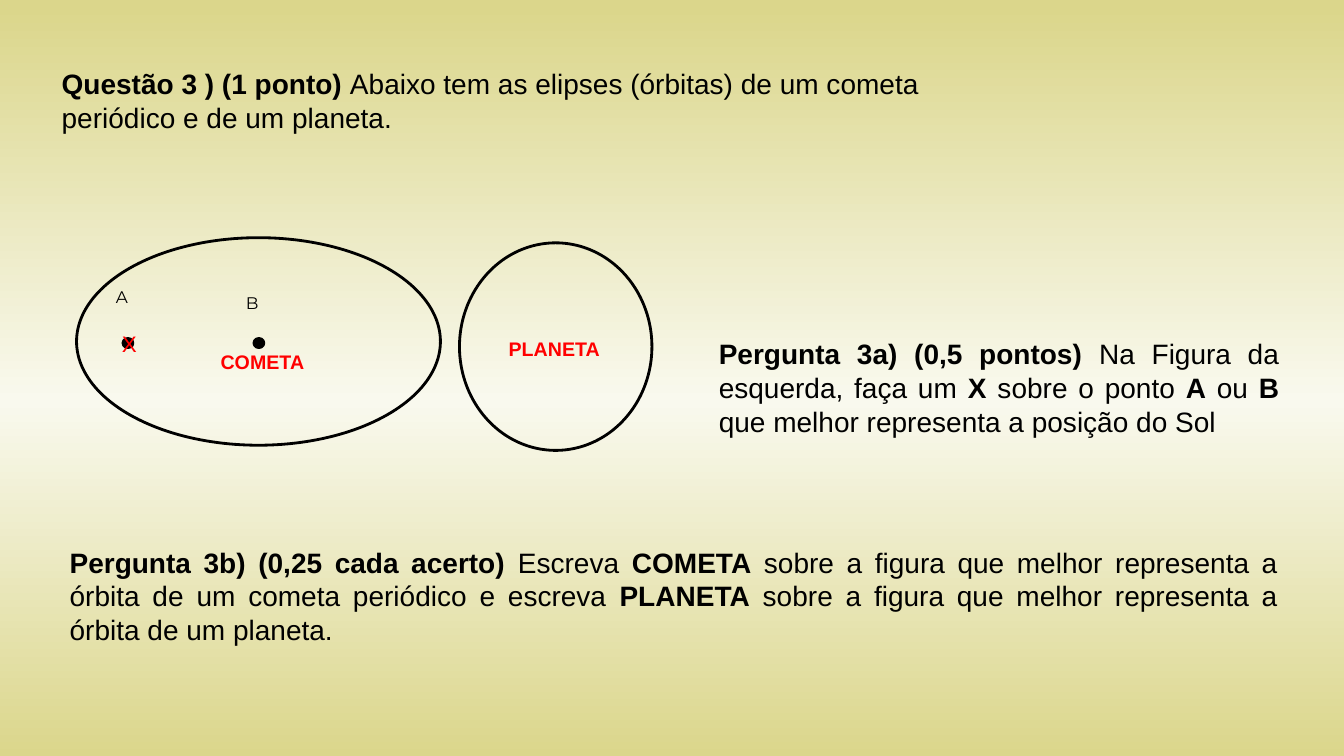
from copy import deepcopy

from pptx import Presentation
from pptx.dml.color import RGBColor
from pptx.enum.shapes import MSO_SHAPE as Preset
from pptx.enum.text import MSO_ANCHOR as Anchor, MSO_AUTO_SIZE as AutoSize, PP_ALIGN as Align
from pptx.oxml.ns import qn
from pptx.util import Cm, Pt

# Content: places are left, top, width, height in cm; ** switches bold on and off
BLACK, RED = "000000", "FF0000"
BACKGROUND_STOPS = [(0.01, "DBD68B"), (0.53, "F9F9EE"), (1, "DBD68B")]
QUESTIONS = [
    ("**Questão 3 ) (1 ponto) **Abaixo tem as elipses (órbitas) de um cometa "
     "periódico e de um planeta.", (1.3, 1.55, 22.2, 1.96), Align.LEFT),
    ("**Pergunta 3a) (0,5 pontos)** Na Figura da esquerda, faça um **X** sobre o ponto "
     "**A** ou **B** que melhor representa a posição do Sol",
     (17.86, 8.36, 14.63, 2.82), Align.JUSTIFY),
    ("**Pergunta 3b) (0,25 cada acerto) **Escreva **COMETA** sobre a figura que melhor "
     "representa a órbita de um cometa periódico e escreva **PLANETA** sobre a figura "
     "que melhor representa a órbita de um planeta.",
     (1.5, 13.61, 30.96, 2.82), Align.JUSTIFY),
]
ORBITS = [(11.58, 6.12, 4.85, 5.23), (1.93, 5.99, 9.17, 5.23)]
POINTS = [(3.1, 8.53, 0.25, 0.23), (6.4, 8.53, 0.25, 0.23)]
LETTERS = [("A", (2.54, 7.11, 1.07, 1.45)), ("B", (5.82, 7.24, 1.07, 1.45))]
ANSWERS = [
    ("X", (2.82, 8.2, 0.89, 1.55), {"size": Pt(16), "bold": False}),
    ("COMETA", (5.31, 8.69, 2.67, 1.63), {"size": Pt(14), "bold": True}),
    ("PLANETA", (12.57, 8.36, 2.87, 1.63), {"size": Pt(14), "bold": True}),
]
QUESTION_FONT = {"name": "Arial", "size": Pt(20)}
LETTER_FONT = {"name": "Montserrat", "size": Pt(12)}


def color(hex_text):
    return RGBColor.from_string(hex_text)


def lengths(place):
    return [Cm(value) for value in place]


def apply(target, formats):
    for name, value in formats.items():
        setattr(target, name, value)


def write(paragraph, text, font_color, formats):
    for index, part in enumerate(text.split("**")):
        if part:
            run = paragraph.add_run()
            run.text = part
            apply(run.font, {"bold": index % 2 == 1, **formats})
            run.font.color.rgb = color(font_color)


def add_ellipse(shapes, place, filled):
    shape = shapes.add_shape(Preset.OVAL, *lengths(place))
    shape.shadow.inherit = False
    shape.line.color.rgb = color(BLACK)
    shape.line.width = Pt(2)
    if filled:
        shape.fill.solid()
        shape.fill.fore_color.rgb = color(BLACK)
    else:
        shape.fill.background()


def add_label(shapes, text, place, font_color, formats, frame_formats, alignment):
    frame = shapes.add_textbox(*lengths(place)).text_frame
    apply(frame, frame_formats)
    frame.paragraphs[0].alignment = alignment
    write(frame.paragraphs[0], text, font_color, formats)


def paint_background(slide):
    fill = slide.background.fill
    fill.gradient()
    fill.gradient_angle = 270
    stop_list = next(slide.element.iter(qn("a:gsLst")))
    stop_list.append(deepcopy(stop_list[0]))
    for stop, (position, hex_text) in zip(fill.gradient_stops, BACKGROUND_STOPS):
        stop.position = position
        stop.color.rgb = color(hex_text)


def fill_placeholder(shape, text, place, alignment):
    apply(shape, dict(zip(("left", "top", "width", "height"), lengths(place))))
    frame = shape.text_frame
    apply(frame, {"word_wrap": True, "vertical_anchor": Anchor.TOP,
                  "auto_size": AutoSize.SHAPE_TO_FIT_TEXT})
    paragraph = frame.paragraphs[0]
    apply(paragraph, {"alignment": alignment, "space_before": Pt(0), "line_spacing": 1.0})
    # No bullet and no hanging indent
    properties = paragraph._p.get_or_add_pPr()
    properties.set("marL", "0")
    properties.set("indent", "0")
    properties.append(properties.makeelement(qn("a:buNone"), {}))
    write(paragraph, text, BLACK, QUESTION_FONT)


def main():
    presentation = Presentation()
    presentation.slide_width, presentation.slide_height = Cm(33.87), Cm(19.05)
    two_content = presentation.slide_layouts[3]
    slide = presentation.slides.add_slide(two_content)
    paint_background(slide)

    # Questions in the title and the two body placeholders
    for index, (text, place, alignment) in enumerate(QUESTIONS):
        fill_placeholder(slide.placeholders[index], text, place, alignment)

    # Orbits with their candidate points
    figure = slide.shapes.add_group_shape().shapes
    for place in ORBITS:
        add_ellipse(figure, place, filled=False)
    for place in POINTS:
        add_ellipse(figure, place, filled=True)
    for text, place in LETTERS:
        add_label(figure, text, place, BLACK, LETTER_FONT, {"word_wrap": True}, Align.CENTER)

    # Answers in red
    growing = {"word_wrap": False, "auto_size": AutoSize.SHAPE_TO_FIT_TEXT}
    for text, place, formats in ANSWERS:
        add_label(slide.shapes, text, place, RED, {"name": "Arial", **formats},
                  growing, Align.LEFT)

    presentation.save("out.pptx")


if __name__ == "__main__":
    main()
